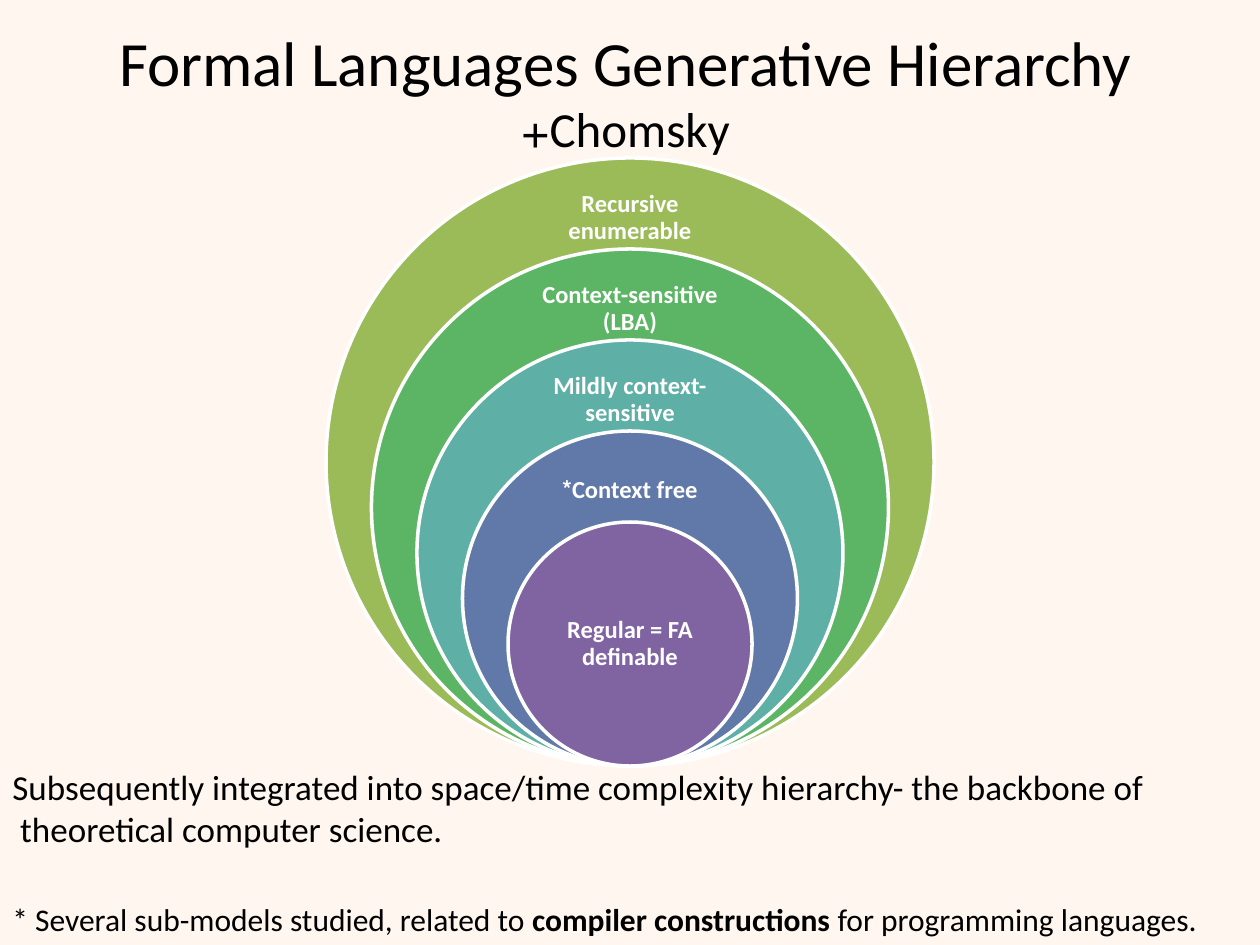
"""Build the slide on the generative hierarchy of formal languages."""
import dataclasses

import pptx
import pptx.dml.color
import pptx.enum.shapes
import pptx.enum.text
import pptx.util

EMU_PER_PX = 914400 / 126
CENTER = pptx.enum.text.PP_ALIGN.CENTER
MIDDLE = pptx.enum.text.MSO_ANCHOR.MIDDLE


@dataclasses.dataclass(frozen=True)
class Theme:
    font: str = "Calibri"
    background: str = "FEF6EF"
    ink: str = "000000"
    light: str = "FFFFFF"
    rings: tuple = ("9BBB59", "5CB565", "5EAFA6", "6179A8", "8064A2")
    title: int = 36
    subtitle: int = 28
    label: int = 14
    body: int = 20
    footnote: int = 18
    outline: int = 2


def px(length):
    return pptx.util.Emu(round(length * EMU_PER_PX))


def rgb(value):
    return pptx.dml.color.RGBColor.from_string(value)


def add_run(text, *, paragraph, font, size, color, bold=False):
    run = paragraph.add_run()
    run.text = text
    run.font.name = font
    run.font.size = pptx.util.Pt(size)
    run.font.color.rgb = rgb(color)
    run.font.bold = bold


class HierarchySlide:
    def __init__(self, deck, theme):
        self.theme = theme
        self.slide = deck.slides.add_slide(deck.slide_layouts[6])
        self.slide.background.fill.solid()
        self.slide.background.fill.fore_color.rgb = rgb(theme.background)

    def text_frame(self, left, top, width, height, anchor=None, inset=None):
        box = self.slide.shapes.add_textbox(*map(px, (left, top, width, height)))
        frame = box.text_frame
        frame.word_wrap = True
        if anchor is not None:
            frame.vertical_anchor = anchor
        if inset is not None:
            frame.margin_left = frame.margin_right = px(inset)
            frame.margin_top = frame.margin_bottom = px(inset)
        return frame

    def center_rtl(self, paragraph):
        paragraph.alignment = CENTER
        paragraph._p.get_or_add_pPr().set("rtl", "1")

    def title(self, heading, subheading):
        theme = self.theme
        paragraph = self.text_frame(32, 10, 1187, 161, MIDDLE).paragraphs[0]
        self.center_rtl(paragraph)
        add_run(heading, paragraph=paragraph, font=theme.font,
                size=theme.title, color=theme.ink)
        paragraph.add_line_break()
        add_run(subheading, paragraph=paragraph, font=theme.font,
                size=theme.subtitle, color=theme.ink)

    def ring(self, center, bottom, diameter, color):
        ring = self.slide.shapes.add_shape(
            pptx.enum.shapes.MSO_SHAPE.OVAL, px(center - diameter / 2),
            px(bottom - diameter), px(diameter), px(diameter))
        ring.shadow.inherit = False
        ring.fill.solid()
        ring.fill.fore_color.rgb = rgb(color)
        ring.line.color.rgb = rgb(self.theme.light)
        ring.line.width = pptx.util.Pt(self.theme.outline)

    def label(self, text, center, top, width, height):
        frame = self.text_frame(center - width / 2, top, width, height, MIDDLE, 14)
        paragraph = frame.paragraphs[0]
        self.center_rtl(paragraph)
        paragraph.line_spacing = 0.9
        add_run(text, paragraph=paragraph, font=self.theme.font,
                size=self.theme.label, color=self.theme.light, bold=True)

    def remarks(self, lines, gap):
        frame = self.text_frame(0, 759, 1260, 186)
        for index, (size, pieces) in enumerate(lines):
            paragraph = frame.paragraphs[0] if index == 0 else frame.add_paragraph()
            if index == len(lines) - 1:
                paragraph.space_before = pptx.util.Pt(gap)
            for text, bold in pieces:
                add_run(text, paragraph=paragraph, font=self.theme.font,
                        size=size, color=self.theme.ink, bold=bold)


def main():
    deck = pptx.Presentation()
    deck.slide_width, deck.slide_height = px(1260), px(945)
    theme = Theme()
    hierarchy = HierarchySlide(deck, theme)
    hierarchy.title("Formal Languages Generative Hierarchy", "Chomsky+")

    center, bottom, outer, step = 630, 766, 608, 91
    classes = (
        ("Recursive enumerable", 228, 30, 60),
        ("Context-sensitive (LBA)", 223, 30, 60),
        ("Mildly context-sensitive", 220, 30, 60),
        ("Context free*", 181, 30, 60),
        ("Regular = FA definable", 173, 61, 122),
    )
    for level, (name, width, drop, height) in enumerate(classes):
        diameter = outer - level * step
        hierarchy.ring(center, bottom, diameter, theme.rings[level])
        hierarchy.label(name, center, bottom - diameter + drop, width, height)

    hierarchy.remarks((
        (theme.body, (("Subsequently integrated into space/time complexity "
                       "hierarchy- the backbone of", False),)),
        (theme.body, ((" theoretical computer science.", False),)),
        (theme.footnote, (("* Several sub-models studied, related to ", False),
                          ("compiler constructions ", True),
                          ("for programming languages.", False))),
    ), gap=29)
    deck.save("out.pptx")


if __name__ == "__main__":
    main()
